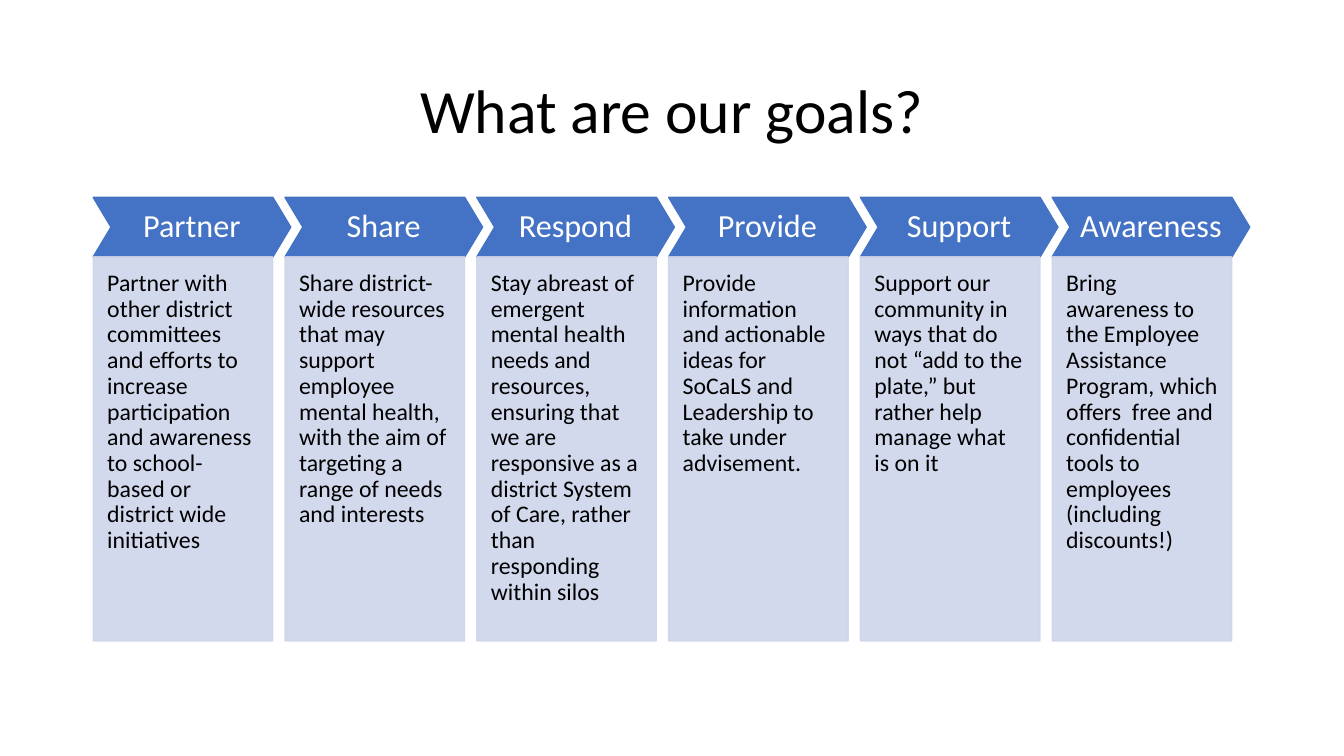
"""Build the slide that lists six goals as a row of chevrons with descriptions."""
from dataclasses import dataclass

from pptx import Presentation
from pptx import util as u
from pptx.dml.color import RGBColor
from pptx.enum import shapes, text
from pptx.oxml import xmlchemy
from pptx.oxml import ns

BLACK = RGBColor(0x00, 0x00, 0x00)
WHITE = RGBColor(0xFF, 0xFF, 0xFF)
BLUE = RGBColor(0x44, 0x72, 0xC4)
PALE_BLUE = RGBColor(0xCF, 0xD5, 0xEA)

LEFT, PITCH = 66.6, 137
HEADING_TOP, HEADING_WIDTH, HEADING_HEIGHT = 141, 141.1, 42.5
BODY_TOP, BODY_WIDTH, BODY_HEIGHT = 183.5, 128.2, 274.3


@dataclass(frozen=True)
class Goal:
    heading: str
    body: str


@dataclass(frozen=True)
class TextStyle:
    size: float
    color: RGBColor
    alignment: text.PP_ALIGN
    anchor: text.MSO_ANCHOR
    margins: tuple[float, float, float, float]


TITLE_STYLE = TextStyle(
    44, BLACK, text.PP_ALIGN.CENTER, text.MSO_ANCHOR.MIDDLE, (7.2, 3.6, 7.2, 3.6))
HEADING_STYLE = TextStyle(
    23, WHITE, text.PP_ALIGN.CENTER, text.MSO_ANCHOR.MIDDLE, (5, 5, 5, 5))
BODY_STYLE = TextStyle(
    17, BLACK, text.PP_ALIGN.LEFT, text.MSO_ANCHOR.TOP, (10, 10, 10, 20))

GOALS = [
    Goal("Partner", "Partner with other district committees and efforts to increase "
         "participation and awareness to school-based or district wide initiatives"),
    Goal("Share", "Share district-wide resources that may support employee mental "
         "health, with the aim of targeting a range of needs and interests"),
    Goal("Respond", "Stay abreast of emergent mental health needs and resources, "
         "ensuring that we are responsive as a district System of Care, rather than "
         "responding within silos"),
    Goal("Provide", "Provide information and actionable ideas for SoCaLS and "
         "Leadership to take under advisement."),
    Goal("Support", "Support our community in ways that do not “add to the plate,” "
         "but rather help manage what is on it"),
    Goal("Awareness", "Bring awareness to the Employee Assistance Program, which "
         "offers  free and confidential tools to employees (including discounts!)"),
]


def apply_format(target: object, values: dict) -> None:
    """Set each named attribute on the target."""
    for name, value in values.items():
        setattr(target, name, value)


def write_text(shape, words: str, style: TextStyle) -> None:
    """Fill a shape with one styled paragraph."""
    left, top, right, bottom = map(u.Pt, style.margins)
    frame = shape.text_frame
    apply_format(frame, {
        "word_wrap": True, "vertical_anchor": style.anchor, "margin_left": left,
        "margin_top": top, "margin_right": right, "margin_bottom": bottom})
    paragraph = frame.paragraphs[0]
    apply_format(paragraph, {
        "text": words, "alignment": style.alignment, "line_spacing": 0.9})
    apply_format(paragraph.runs[0].font, {
        "name": "Calibri", "size": u.Pt(style.size)})
    paragraph.runs[0].font.color.rgb = style.color


def add_panel(slide, kind: shapes.MSO_SHAPE, box: tuple, color: RGBColor):
    """Add a preset shape with fill and outline in one colour."""
    shape = slide.shapes.add_shape(kind, *map(u.Pt, box))
    shape.shadow.inherit = False
    shape.fill.solid()
    shape.fill.fore_color.rgb = color
    shape.line.color.rgb = color
    shape.line.width = u.Pt(1)
    return shape


def set_opacity(shape, percent: int) -> None:
    """Make the fill and outline of a shape partly transparent."""
    for color in shape.element.spPr.iter(ns.qn("a:srgbClr")):
        alpha = xmlchemy.OxmlElement("a:alpha")
        alpha.set("val", str(percent * 1000))
        color.append(alpha)


def add_goal(slide, goal: Goal, left: float) -> None:
    """Add one goal column: a chevron heading above its description."""
    chevron = add_panel(slide, shapes.MSO_SHAPE.CHEVRON,
                        (left, HEADING_TOP, HEADING_WIDTH, HEADING_HEIGHT), BLUE)
    chevron.adjustments[0] = 0.3
    write_text(chevron, goal.heading, HEADING_STYLE)
    body = add_panel(slide, shapes.MSO_SHAPE.RECTANGLE,
                     (left, BODY_TOP, BODY_WIDTH, BODY_HEIGHT), PALE_BLUE)
    set_opacity(body, 90)
    write_text(body, goal.body, BODY_STYLE)


def main() -> None:
    """Create and save the presentation."""
    presentation = Presentation()
    apply_format(presentation, {"slide_width": u.Pt(960), "slide_height": u.Pt(540)})
    slide = presentation.slides.add_slide(presentation.slide_layouts[6])
    title = slide.shapes.add_textbox(*map(u.Pt, (66, 28.75, 828, 104.4)))
    write_text(title, "What are our goals?", TITLE_STYLE)
    for index, goal in enumerate(GOALS):
        add_goal(slide, goal, LEFT + index * PITCH)
    presentation.save("out.pptx")


if __name__ == "__main__":
    main()
